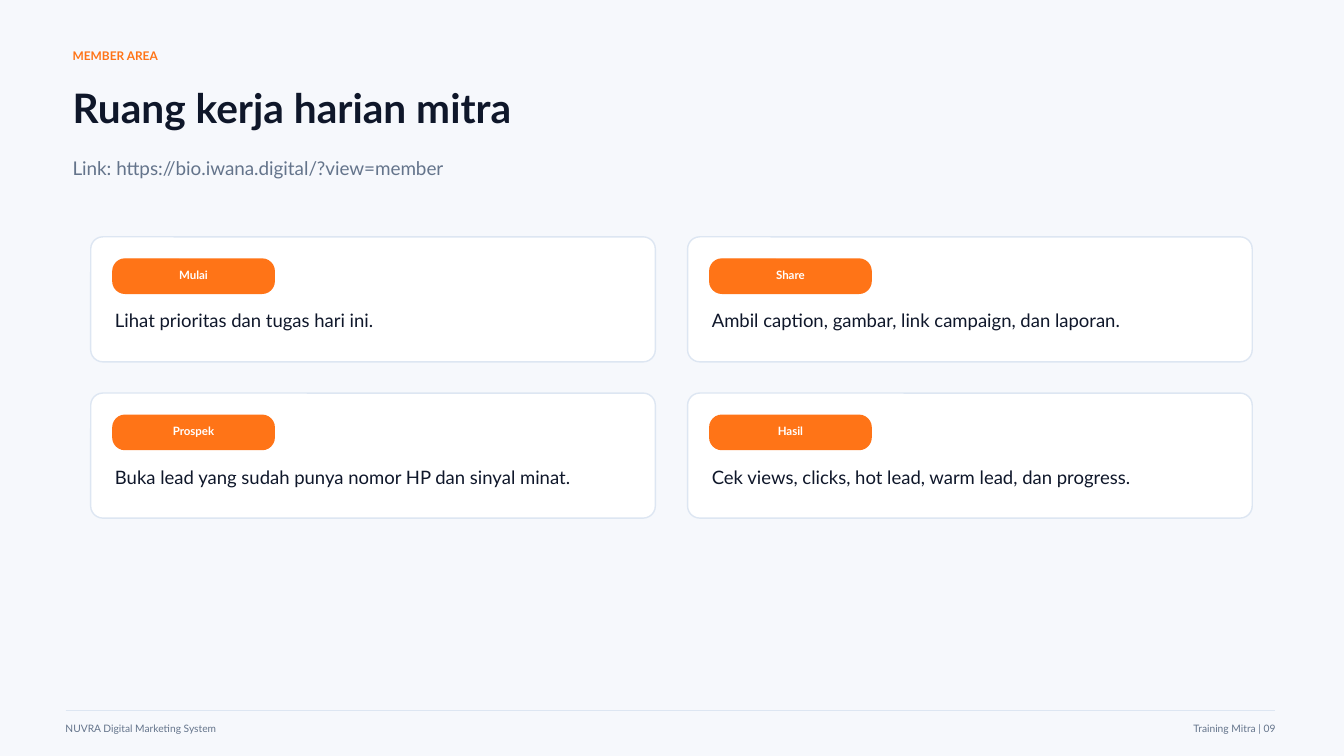
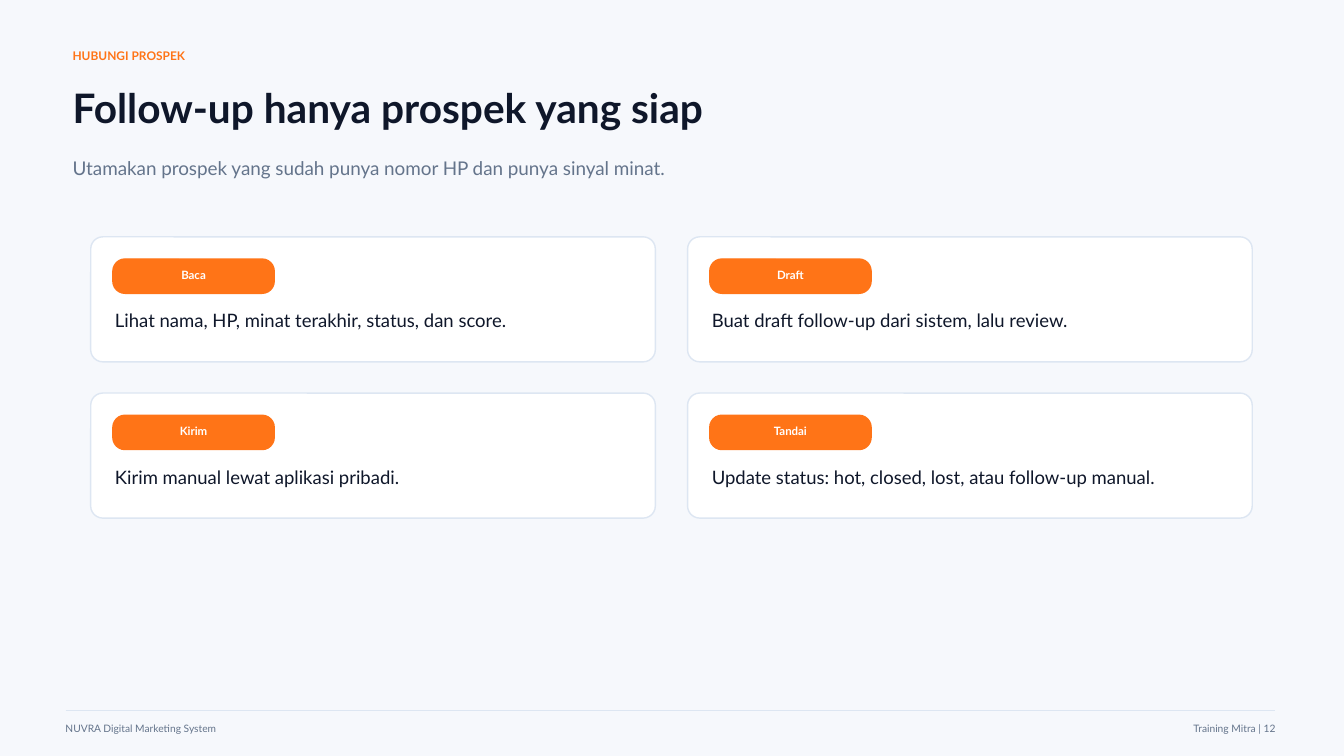
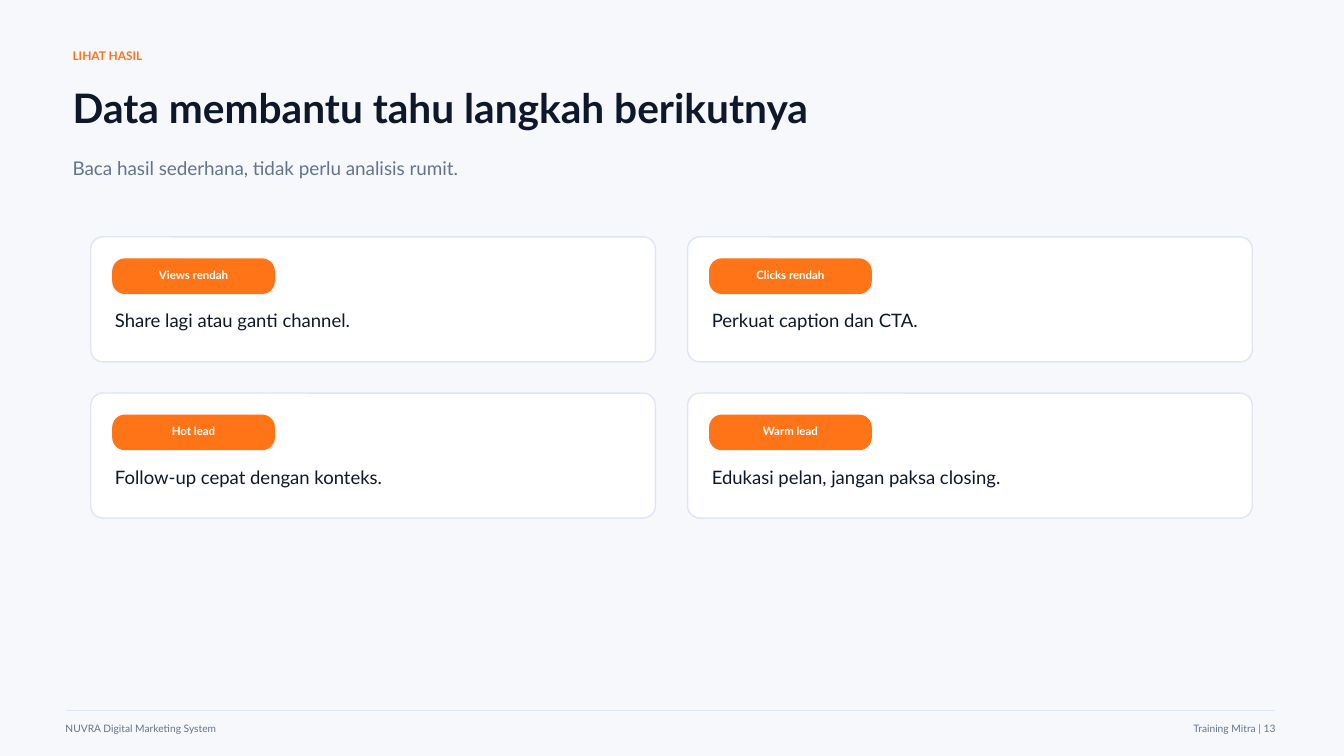
"""Build three member-training slides, each with a two-by-two grid of labelled cards."""
from lxml import etree
from pptx import Presentation
from pptx.dml.color import RGBColor
from pptx.enum import shapes, text
from pptx.oxml import ns
from pptx.util import Inches, Pt

COLORS = {
    "canvas": "F6F8FC",
    "card": "FFFFFF",
    "border": "DDE6F2",
    "accent": "FF7417",
    "ink": "0F172A",
    "muted": "64748B",
}

STYLES = {
    "eyebrow": ("accent", {"size": Pt(8.5), "bold": True}),
    "title": ("ink", {"size": Pt(29), "bold": True}),
    "subtitle": ("muted", {"size": Pt(13.5), "bold": False}),
    "footer": ("muted", {"size": Pt(7.3), "bold": False}),
    "pill": ("card", {"size": Pt(8.2), "bold": True}),
    "body": ("ink", {"size": Pt(13.2), "bold": False}),
}

FRAME = {
    "word_wrap": True,
    "auto_size": text.MSO_AUTO_SIZE.NONE,
    "vertical_anchor": text.MSO_ANCHOR.TOP,
    "margin_left": 0,
    "margin_top": 0,
    "margin_right": 0,
    "margin_bottom": 0,
}

LEFT, CENTER, RIGHT = text.PP_ALIGN.LEFT, text.PP_ALIGN.CENTER, text.PP_ALIGN.RIGHT
TEXT_LEFT = 0.72
FOOTER_LEFT, FOOTER_RIGHT = 0.65, 12.65
GRID_LEFT, GRID_TOP = 0.9, 2.35
CARD_WIDTH, CARD_HEIGHT = 5.6, 1.24
COLUMN_GAP, ROW_GAP = 0.32, 0.31
COLUMNS = 2
CORNER = 0.12

LESSONS = [
    {
        "eyebrow": "MEMBER AREA",
        "title": "Ruang kerja harian mitra",
        "subtitle": "Link: https://bio.iwana.digital/?view=member",
        "number": "09",
        "cards": [
            ("Mulai", "Lihat prioritas dan tugas hari ini."),
            ("Share", "Ambil caption, gambar, link campaign, dan laporan."),
            ("Prospek", "Buka lead yang sudah punya nomor HP dan sinyal minat."),
            ("Hasil", "Cek views, clicks, hot lead, warm lead, dan progress."),
        ],
    },
    {
        "eyebrow": "HUBUNGI PROSPEK",
        "title": "Follow-up hanya prospek yang siap",
        "subtitle": "Utamakan prospek yang sudah punya nomor HP dan punya sinyal minat.",
        "number": "12",
        "cards": [
            ("Baca", "Lihat nama, HP, minat terakhir, status, dan score."),
            ("Draft", "Buat draft follow-up dari sistem, lalu review."),
            ("Kirim", "Kirim manual lewat aplikasi pribadi."),
            ("Tandai", "Update status: hot, closed, lost, atau follow-up manual."),
        ],
    },
    {
        "eyebrow": "LIHAT HASIL",
        "title": "Data membantu tahu langkah berikutnya",
        "subtitle": "Baca hasil sederhana, tidak perlu analisis rumit.",
        "number": "13",
        "cards": [
            ("Views rendah", "Share lagi atau ganti channel."),
            ("Clicks rendah", "Perkuat caption dan CTA."),
            ("Hot lead", "Follow-up cepat dengan konteks."),
            ("Warm lead", "Edukasi pelan, jangan paksa closing."),
        ],
    },
]


def rgb(name):
    """Return the named palette colour."""
    return RGBColor.from_string(COLORS[name])


def apply(target, values):
    """Set each attribute in values on the target."""
    for attribute, value in values.items():
        setattr(target, attribute, value)


def write(shape, wording, style, align=LEFT, **frame):
    """Fill a shape with one paragraph in a named style."""
    apply(shape.text_frame, {**FRAME, **frame})
    paragraph = shape.text_frame.paragraphs[0]
    paragraph.alignment = align
    run = paragraph.add_run()
    run.text = wording
    color, font = STYLES[style]
    apply(run.font, {"name": "Lato", **font})
    run.font.color.rgb = rgb(color)


def add_label(slide, box, wording, style, align=LEFT):
    """Add a text box at left, top, width, height in inches."""
    write(slide.shapes.add_textbox(*map(Inches, box)), wording, style, align)


def add_panel(slide, box, fill, border):
    """Add a rounded rectangle with the shared corner radius."""
    panel = slide.shapes.add_shape(
        shapes.MSO_SHAPE.ROUNDED_RECTANGLE, *map(Inches, box))
    panel.adjustments[0] = CORNER / box[3]
    panel.shadow.inherit = False
    panel.fill.solid()
    panel.fill.fore_color.rgb = rgb(fill)
    panel.line.color.rgb = rgb(border)
    panel.line.width = Pt(1)
    return panel


def add_card(slide, left, top, step, advice):
    """Add a white card with an orange step pill and a line of advice."""
    add_panel(slide, (left, top, CARD_WIDTH, CARD_HEIGHT), "card", "border")
    pill = add_panel(slide, (left + 0.22, top + 0.22, 1.6, 0.34), "accent", "accent")
    write(pill, step, "pill", CENTER,
          vertical_anchor=text.MSO_ANCHOR.MIDDLE, margin_bottom=Inches(0.03))
    add_label(slide, (left + 0.24, top + 0.72, 5.12, 0.29), advice, "body")


def add_heading(slide, lesson):
    """Place the eyebrow, title and subtitle."""
    add_label(slide, (TEXT_LEFT, 0.48, 5.6, 0.22), lesson["eyebrow"], "eyebrow")
    title = slide.shapes.title
    apply(title, {"left": Inches(TEXT_LEFT), "top": Inches(0.82),
                  "width": Inches(8.8), "height": Inches(0.62)})
    write(title, lesson["title"], "title")
    add_label(slide, (TEXT_LEFT, 1.55, 8.4, 0.45), lesson["subtitle"], "subtitle")


def add_footer(slide, number):
    """Add the footer rule, system name and page number."""
    rule = slide.shapes.add_connector(
        shapes.MSO_CONNECTOR.STRAIGHT,
        *map(Inches, (FOOTER_LEFT, 7.05, FOOTER_RIGHT, 7.05)))
    rule.line.color.rgb = rgb("border")
    rule.line.width = Pt(1)
    etree.SubElement(rule._element.spPr, ns.qn("a:effectLst"))
    add_label(slide, (FOOTER_LEFT, 7.17, 5, 0.15),
              "NUVRA Digital Marketing System", "footer")
    add_label(slide, (FOOTER_RIGHT - 1.65, 7.17, 1.65, 0.15),
              f"Training Mitra | {number}", "footer", RIGHT)


def add_lesson(deck, lesson):
    """Add one slide with its heading, footer and card grid."""
    slide = deck.slides.add_slide(deck.slide_layouts[5])
    add_heading(slide, lesson)
    add_footer(slide, lesson["number"])
    for index, (step, advice) in enumerate(lesson["cards"]):
        row, column = divmod(index, COLUMNS)
        add_card(slide,
                 GRID_LEFT + column * (CARD_WIDTH + COLUMN_GAP),
                 GRID_TOP + row * (CARD_HEIGHT + ROW_GAP),
                 step, advice)


def main():
    """Build and save the deck."""
    deck = Presentation()
    apply(deck, {"slide_width": Inches(13.33), "slide_height": Inches(7.5)})
    canvas = deck.slide_master.background.fill
    canvas.solid()
    canvas.fore_color.rgb = rgb("canvas")
    for lesson in LESSONS:
        add_lesson(deck, lesson)
    deck.save("out.pptx")


if __name__ == "__main__":
    main()
